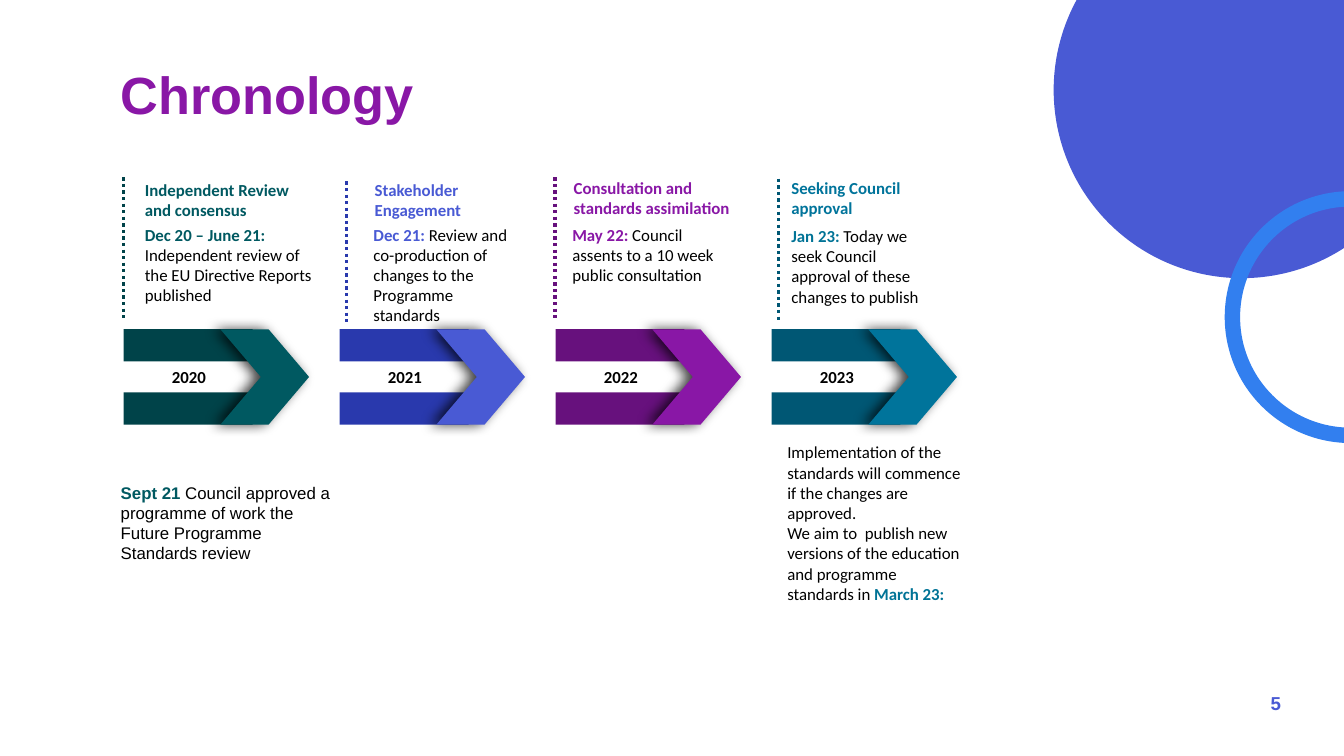
from lxml.etree import SubElement
from pptx import Presentation
from pptx.dml.color import RGBColor
from pptx.enum.dml import MSO_LINE
from pptx.enum.shapes import MSO_CONNECTOR, MSO_SHAPE
from pptx.enum.text import MSO_ANCHOR, MSO_AUTO_SIZE, PP_ALIGN
from pptx.oxml.ns import qn
from pptx.util import Inches, Pt

COLORS = {
    "black": "000000", "blue": "495AD4", "navy": "2939AD", "sky": "327FEF",
    "green": "005961", "pine": "004349", "purple": "8917A6", "plum": "67117D",
    "teal": "00749B", "sea": "007396", "deep": "005774",
}
LEFT, PITCH = 0.92, 1.607
# year, dark, light, dotted line (x, top, bottom)
STEPS = [
    ("2020", "pine", "green", (0.92, 1.32, 2.38)),
    ("2021", "navy", "blue", (2.58, 1.35, 2.42)),
    ("2022", "plum", "purple", (4.13, 1.32, 2.38)),
    ("2023", "deep", "teal", (5.79, 1.33, 2.4)),
]
# box, font, paragraphs of (text, colour) runs; coloured runs are bold
NOTES = [
    ((0.98, 1.29, 1.44, 0.4), "Calibri",
     [[("Independent Review and consensus", "green")]]),
    ((0.98, 1.62, 1.44, 0.71), "Calibri",
     [[("Dec 20 – June 21: ", "green"),
       ("Independent review of the EU Directive Reports published", "black")]]),
    ((2.69, 1.29, 1.24, 0.4), "Calibri",
     [[("Stakeholder Engagement", "blue")]]),
    ((2.68, 1.62, 1.28, 0.86), "Calibri",
     [[("Dec 21: ", "blue"),
       ("Review and co-production of changes to the Programme standards",
        "black")]]),
    ((4.17, 1.27, 1.5, 0.4), "Calibri",
     [[("Consultation and standards assimilation", "purple")]]),
    ((4.16, 1.62, 1.29, 0.56), "Calibri",
     [[("May 22: ", "purple"),
       ("Council assents to a 10 week public consultation", "black")]]),
    ((5.79, 1.27, 1.24, 0.4), "Calibri",
     [[("Seeking Council approval", "teal")]]),
    ((5.79, 1.63, 1.16, 0.71), "Calibri",
     [[("Jan 23: ", "sea"),
       ("Today we seek Council approval of these changes to publish",
        "black")]]),
    ((0.8, 3.54, 1.78, 0.71), "Arial",
     [[("Sept 21 ", "green"),
       ("Council approved a programme of work the Future Programme "
        "Standards review", "black")]]),
    ((5.76, 3.24, 1.53, 1.31), "Calibri",
     [[("Implementation of the standards will commence if the changes are "
        "approved.", "black")],
      [("We aim to  publish new versions of the education and programme "
        "standards in ", "black"), ("March 23:", "sea")]]),
]


def color(name):
    return RGBColor.from_string(COLORS[name])


def inches(box):
    return [Inches(v) for v in box]


def style(para, face, size, bold=None, tint=None):
    font = para.font
    font.name, font.size, font.bold = face, Pt(size), bold
    if tint:
        font.color.rgb = color(tint)


def add_shape(slide, kind, box, fill=None):
    shape = slide.shapes.add_shape(kind, *inches(box))
    shape.shadow.inherit = False
    shape.line.fill.background()
    if fill:
        shape.fill.solid()
        shape.fill.fore_color.rgb = color(fill)
    else:
        shape.fill.background()
    return shape


def add_box(slide, box):
    frame = slide.shapes.add_textbox(*inches(box)).text_frame
    frame.word_wrap = True
    return frame


def add_label(slide, box, text, face, size, tint, align):
    frame = add_box(slide, box)
    para = frame.paragraphs[0]
    para.text, para.alignment = text, align
    style(para, face, size, True, tint)
    return frame


def add_note(slide, box, face, paras):
    frame = add_box(slide, box)
    for i, runs in enumerate(paras):
        para = frame.add_paragraph() if i else frame.paragraphs[0]
        style(para, face, 9)
        for text, tint in runs:
            run = para.add_run()
            run.text = text
            run.font.bold = tint != "black"
            run.font.color.rgb = color(tint)


def cast_shadow(shape):
    """Give the shape a soft shadow to its left."""
    effects = shape._element.spPr.find(qn("a:effectLst"))
    outer = SubElement(effects, qn("a:outerShdw"), blurRad=str(Pt(7)),
                       dist=str(Pt(3)), dir="10800000", rotWithShape="0")
    black = SubElement(outer, qn("a:srgbClr"), val=COLORS["black"])
    SubElement(black, qn("a:alpha"), val="75000")


def add_dots(slide, x, top, end, tint):
    line = slide.shapes.add_connector(
        MSO_CONNECTOR.STRAIGHT, *inches((x, top, x, end)))
    line.line.color.rgb = color(tint)
    line.line.width = Pt(1.75)
    line.line.dash_style = MSO_LINE.ROUND_DOT
    SubElement(line._element.spPr, qn("a:effectLst"))


def add_step(slide, x, year, dark, light, dots):
    for top in (2.45, 2.92):
        add_shape(slide, MSO_SHAPE.RECTANGLE, (x, top, 0.96, 0.24), dark)
    arrow = add_shape(slide, MSO_SHAPE.CHEVRON, (x + 0.72, 2.45, 0.66, 0.71),
                      light)
    arrow.adjustments[0] = 0.457
    cast_shadow(arrow)
    frame = add_label(slide, (x + 0.06, 2.68, 0.85, 0.25), year, "Calibri", 9,
                      "black", PP_ALIGN.CENTER)
    frame.vertical_anchor = MSO_ANCHOR.MIDDLE
    add_dots(slide, *dots, dark)


def add_decor(slide):
    add_shape(slide, MSO_SHAPE.OVAL, (7.84, -0.73, 2.8, 2.8), "blue")
    ring = add_shape(slide, MSO_SHAPE.OVAL, (9.17, 1.48, 1.76, 1.76))
    ring.line.color.rgb = color("sky")
    ring.line.width = Pt(8.25)


def set_title(slide, text):
    title = slide.shapes.title
    title.left, title.top, title.width, title.height = inches(
        (0.8, 0.41, 7.42, 0.44))
    frame = title.text_frame
    frame.auto_size = MSO_AUTO_SIZE.NONE
    frame.vertical_anchor = MSO_ANCHOR.TOP
    para = frame.paragraphs[0]
    para.text, para.alignment = text, PP_ALIGN.LEFT
    style(para, "Arial", 28, True, "purple")


def main():
    deck = Presentation()
    deck.slide_width, deck.slide_height = Inches(10), Inches(5.625)
    slide = deck.slides.add_slide(deck.slide_layouts[5])
    add_decor(slide)
    set_title(slide, "Chronology")
    for i, step in enumerate(STEPS):
        add_step(slide, LEFT + i * PITCH, *step)
    for note in NOTES:
        add_note(slide, *note)
    number = add_label(slide, (7.46, 5.18, 2.17, 0.15), "5", "Arial", 10,
                       "blue", PP_ALIGN.RIGHT)
    number.paragraphs[0].line_spacing = Pt(6)
    deck.save("out.pptx")


if __name__ == "__main__":
    main()
